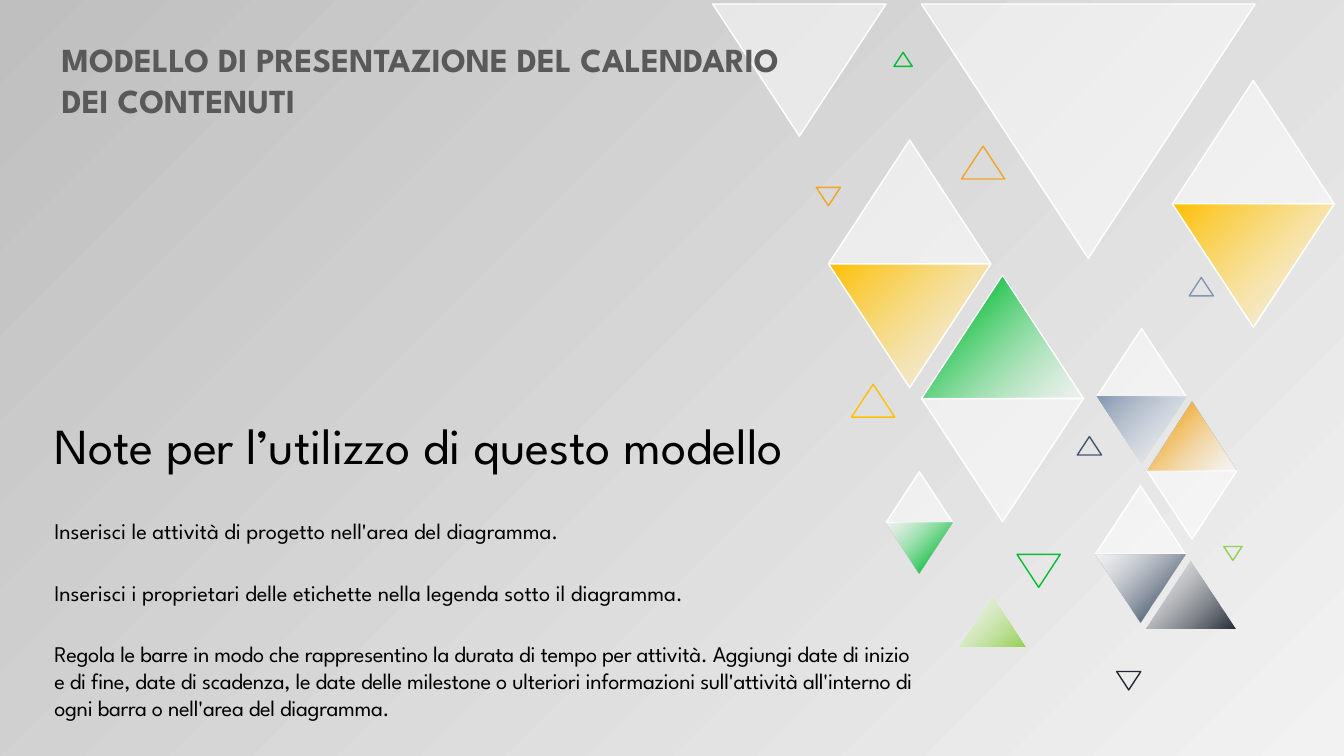
from pptx import Presentation
from pptx.dml.color import RGBColor
from pptx.enum.shapes import MSO_SHAPE
from pptx.enum.text import MSO_ANCHOR, MSO_AUTO_SIZE, PP_ALIGN
from pptx.oxml.ns import qn
from pptx.util import Cm, Pt
from lxml import etree

WHITE = RGBColor(0xFF, 0xFF, 0xFF)
BLACK = RGBColor(0x00, 0x00, 0x00)
TITLE_GRAY = RGBColor(0x59, 0x59, 0x59)
LIGHT_GRAY = RGBColor(0xF2, 0xF2, 0xF2)
MID_GRAY = RGBColor(0xBF, 0xBF, 0xBF)
GOLD = RGBColor(0xFF, 0xC0, 0x00)
ORANGE = RGBColor(0xF0, 0xA6, 0x22)
GREEN = RGBColor(0x00, 0xBD, 0x32)
LIME = RGBColor(0x92, 0xD0, 0x50)
STEEL = RGBColor(0x84, 0x97, 0xB0)
SLATE = RGBColor(0x44, 0x54, 0x6A)
INK = RGBColor(0x22, 0x2A, 0x35)

FONT = "League Spartan"
HEIGHT_RATIO = 0.762
UP, DOWN = 0, 180

presentation = Presentation()
presentation.slide_width = Cm(33.87)
presentation.slide_height = Cm(19.05)
slide = presentation.slides.add_slide(presentation.slide_layouts[5])


def paint_gradient(fill, start, end, end_position=1):
    fill.gradient()
    fill.gradient_angle = 135
    first, last = fill.gradient_stops
    first.color.rgb, last.color.rgb = start, end
    first.position, last.position = 0, end_position


def write_text(shape, texts, size, color, bold=False, gap=0):
    frame = shape.text_frame
    frame.word_wrap = True
    frame.auto_size = MSO_AUTO_SIZE.NONE
    frame.vertical_anchor = MSO_ANCHOR.TOP
    frame.text = "\n".join(texts)
    for index, paragraph in enumerate(frame.paragraphs):
        paragraph.alignment = PP_ALIGN.LEFT
        paragraph.line_spacing = 1.0
        paragraph.space_before = Pt(gap if index else 0)
        paragraph.font.name = FONT
        paragraph.font.size = Pt(size)
        paragraph.font.bold = bold
        paragraph.font.color.rgb = color


paint_gradient(slide.background.fill, LIGHT_GRAY, MID_GRAY)

white_triangles = [
    (20.88, 3.53, 4.09, UP),
    (23.22, 10.03, 4.09, DOWN),
    (23.22, 0.1, 8.41, DOWN),
    (27.61, 12.24, 2.26, UP),
    (27.64, 8.28, 2.26, UP),
    (28.91, 11.86, 2.26, DOWN),
    (22.33, 11.89, 1.68, UP),
    (29.54, 2.03, 4.09, UP),
    (17.96, 0.1, 4.37, DOWN),
]
gradient_triangles = [
    (20.88, 6.65, 4.09, DOWN, GOLD, WHITE),
    (23.22, 6.93, 4.09, UP, WHITE, GREEN),
    (28.88, 14.12, 2.26, UP, INK, WHITE),
    (27.61, 13.97, 2.26, DOWN, WHITE, SLATE),
    (27.64, 9.98, 2.26, DOWN, STEEL, WHITE),
    (28.91, 10.13, 2.26, UP, WHITE, ORANGE),
    (24.16, 15.01, 1.68, UP, LIME, WHITE),
    (22.33, 13.16, 1.68, DOWN, WHITE, GREEN),
    (29.54, 5.13, 4.09, DOWN, GOLD, WHITE),
]
outline_triangles = [
    (25.63, 13.97, 1.09, DOWN, GREEN),
    (21.46, 9.68, 1.09, UP, GOLD),
    (27.15, 11, 0.61, UP, SLATE),
    (28.14, 16.92, 0.61, DOWN, INK),
    (20.57, 4.72, 0.61, DOWN, ORANGE),
    (29.97, 6.99, 0.61, UP, STEEL),
    (22.53, 1.32, 0.46, UP, GREEN),
    (30.84, 13.77, 0.46, DOWN, LIME),
    (24.23, 3.68, 1.09, UP, ORANGE),
]

triangles = [(*place, (WHITE,), WHITE) for place in white_triangles]
triangles += [
    (left, top, width, rotation, (start, end), WHITE if width > 4 else None)
    for left, top, width, rotation, start, end in gradient_triangles
]
triangles += [(*place, (), color) for *place, color in outline_triangles]

for left, top, width, rotation, colors, line_color in triangles:
    triangle = slide.shapes.add_shape(
        MSO_SHAPE.ISOSCELES_TRIANGLE,
        Cm(left), Cm(top), Cm(width), Cm(width * HEIGHT_RATIO),
    )
    triangle.shadow.inherit = False
    triangle.rotation = rotation
    if len(colors) == 2:
        paint_gradient(triangle.fill, *colors, 0.82 if colors[0] == WHITE else 1)
    elif colors:
        triangle.fill.solid()
        triangle.fill.fore_color.rgb = colors[0]
    else:
        triangle.fill.background()
    for color_element in triangle.element.spPr.iter(qn("a:srgbClr")):
        if color_element.get("val") == str(WHITE):
            etree.SubElement(color_element, qn("a:alpha")).set("val", "50000")
    if line_color is None:
        triangle.line.fill.background()
    else:
        triangle.line.color.rgb = line_color
        triangle.line.width = Pt(1)

heading = slide.shapes.add_textbox(Cm(1.12), Cm(10.31), Cm(25.68), Cm(1.8))
write_text(heading, ["Note per l’utilizzo di questo modello"], 36, BLACK)

notes = [
    "Inserisci le attività di progetto nell'area del diagramma.",
    "Inserisci i proprietari delle etichette nella legenda sotto il diagramma.",
    "Regola le barre in modo che rappresentino la durata di tempo per attività. "
    "Aggiungi date di inizio e di fine, date di scadenza, le date delle milestone "
    "o ulteriori informazioni sull'attività all'interno di ogni barra "
    "o nell'area del diagramma.",
]
instructions = slide.shapes.add_textbox(Cm(1.12), Cm(12.9), Cm(22.33), Cm(5.46))
write_text(instructions, notes, 16, BLACK, gap=25)
last_run = instructions.text_frame.paragraphs[-1].runs[0]
last_run.font._element.set("spc", "-20")

title = slide.shapes.title
title.left, title.top, title.width, title.height = Cm(1.3), Cm(0.86), Cm(18.82), Cm(2.31)
write_text(title, ["MODELLO DI PRESENTAZIONE DEL CALENDARIO DEI CONTENUTI"], 24, TITLE_GRAY, bold=True)
slide.shapes.element.append(title.element)

presentation.save("out.pptx")
